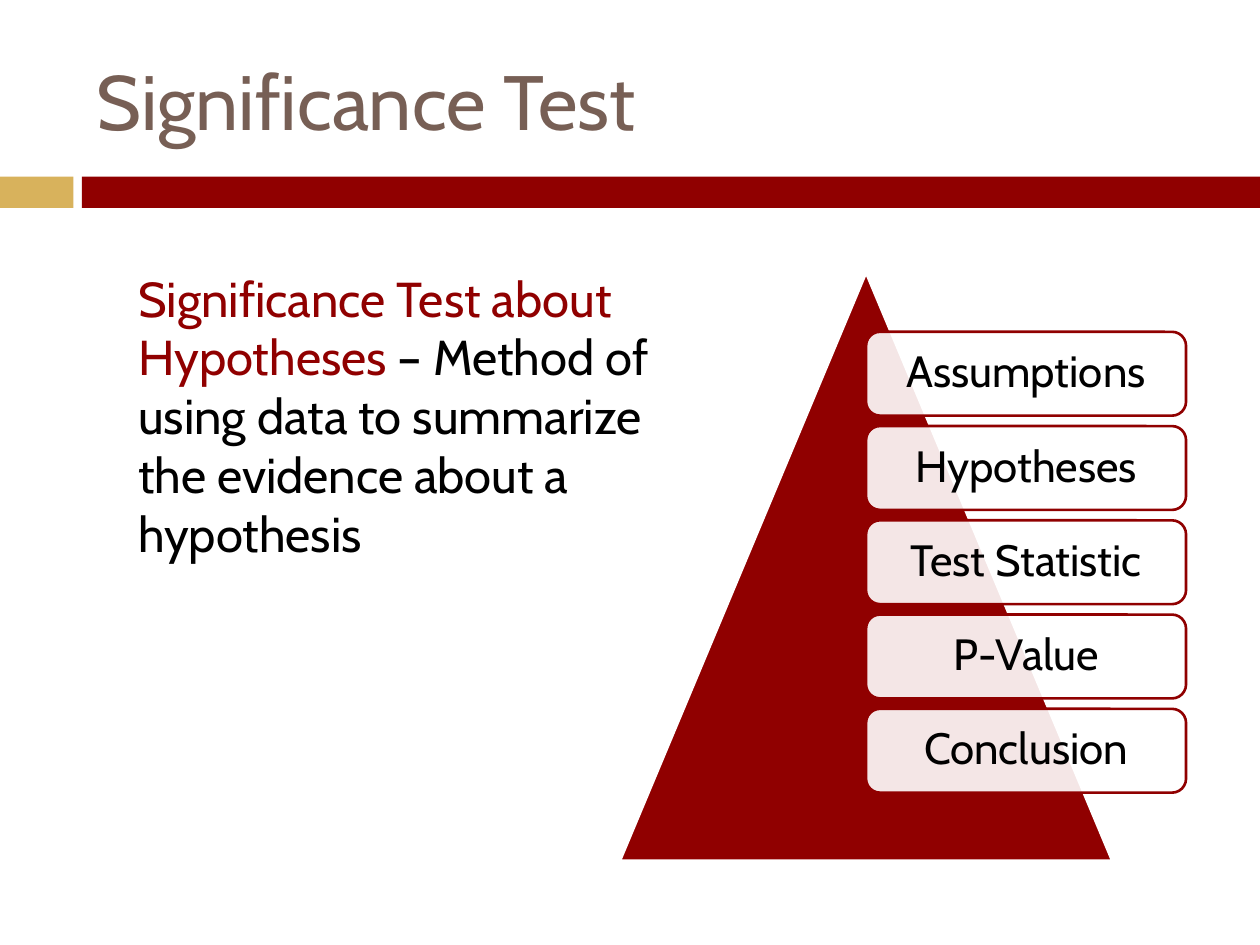
import pptx
import pptx.util
import pptx.dml.color
import pptx.enum.shapes
import pptx.enum.text
import pptx.oxml
import pptx.oxml.ns

Cm, Pt = pptx.util.Cm, pptx.util.Pt
KIND = pptx.enum.shapes.MSO_SHAPE
ALIGN = pptx.enum.text.PP_ALIGN
ANCHOR = pptx.enum.text.MSO_ANCHOR

# Content
TITLE = "Significance Test"
BODY = [
    ("Significance Test about Hypotheses ", "red"),
    ("– Method of using data to summarize the evidence about a hypothesis", "black"),
]
STEPS = ["Assumptions", "Hypotheses", "Test Statistic", "P-Value", "Conclusion"]

COLORS = {"red": "900000", "gold": "D8B25C", "brown": "775F55",
          "black": "000000", "white": "FFFFFF"}
FONT = "Cabin"

# Layout in cm
WIDE, HIGH = 25.4, 19.05
BARS = [(0, 1.48, "gold"), (1.65, WIDE - 1.65, "red")]
BAR_TOP, BAR_HIGH = 3.56, 0.63
CARD = {"left": 17.46, "top": 6.69, "wide": 6.45, "high": 1.69, "step": 1.9}


def color(name):
    return pptx.dml.color.RGBColor.from_string(COLORS[name])


def draw(kind, box, fill, line=None):
    shape = slide.shapes.add_shape(kind, *map(Cm, box))
    shape.shadow.inherit = False
    shape.fill.solid()
    shape.fill.fore_color.rgb = color(fill)
    if line:
        shape.line.color.rgb = color(line)
        shape.line.width = Pt(1.5)
    else:
        shape.line.fill.background()
    return shape


def write(shape, runs, size, anchor):
    frame = shape.text_frame
    frame.word_wrap = True
    frame.vertical_anchor = anchor
    para = frame.paragraphs[0]
    para.font.name, para.font.size = FONT, Pt(size)
    for text, tint in runs:
        run = para.add_run()
        run.text = text
        run.font.color.rgb = color(tint)
    return para


def fade(shape, share):
    tint = shape.fill._xPr.find(".//" + pptx.oxml.ns.qn("a:srgbClr"))
    alpha = pptx.oxml.parse_xml(
        f'<a:alpha {pptx.oxml.ns.nsdecls("a")} val="{share * 1000}"/>')
    tint.append(alpha)


deck = pptx.Presentation()
deck.slide_width, deck.slide_height = Cm(WIDE), Cm(HIGH)
slide = deck.slides.add_slide(deck.slide_layouts[6])

# Header bars
for left, wide, fill in BARS:
    draw(KIND.RECTANGLE, (left, BAR_TOP, wide, BAR_HIGH), fill)

# Title and definition
head = slide.shapes.add_textbox(*map(Cm, (1.7, 0.64, 22.66, 2.74)))
write(head, [(TITLE, "brown")], 44, ANCHOR.MIDDLE)
body = slide.shapes.add_textbox(*map(Cm, (2.54, 5.28, 11, 12.37)))
write(body, BODY, 28, ANCHOR.TOP).space_before = Pt(7)

# Pyramid with one card per step
draw(KIND.ISOSCELES_TRIANGLE, (12.5, 5.5, 9.92, 11.85), "red", "white")
for row, step in enumerate(STEPS):
    top = CARD["top"] + row * CARD["step"]
    card = draw(KIND.ROUNDED_RECTANGLE,
                (CARD["left"], top, CARD["wide"], CARD["high"]), "white", "red")
    fade(card, 90)
    para = write(card, [(step, "black")], 25, ANCHOR.MIDDLE)
    para.alignment = ALIGN.CENTER
    para.line_spacing = 0.9

deck.save("out.pptx")
